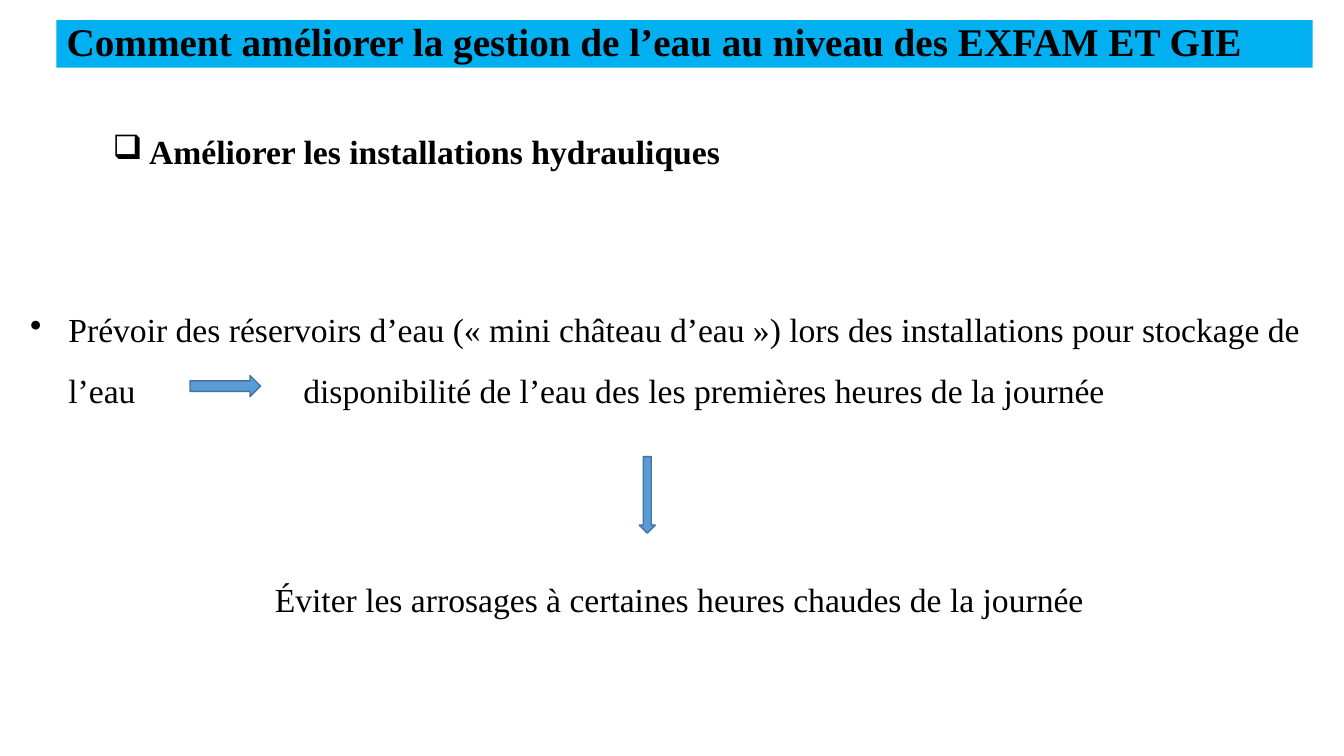
from lxml import etree
from pptx import Presentation
from pptx.dml.color import RGBColor
from pptx.enum import shapes, text
from pptx.oxml.ns import qn
from pptx.util import Inches, Pt

BLACK = RGBColor(0x00, 0x00, 0x00)
CYAN = RGBColor(0x00, 0xB0, 0xF0)
BLUE = RGBColor(0x5B, 0x9B, 0xD5)
NAVY = RGBColor(0x43, 0x73, 0x9E)
FONT = "Times New Roman"


class Deck:
    def __init__(self):
        self.prs = Presentation()
        self.prs.slide_width = Inches(13.33)
        self.prs.slide_height = Inches(7.5)
        self.slide = self.prs.slides.add_slide(self.prs.slide_layouts[5])

    def label(self, shape, words, size=24, bold=False, align=text.PP_ALIGN.LEFT,
              space=1.0):
        frame = shape.text_frame
        frame.word_wrap = True
        para = frame.paragraphs[0]
        para.alignment = align
        para.line_spacing = space
        run = para.add_run()
        run.text = words
        font = run.font
        font.name, font.size, font.bold = FONT, Pt(size), bold
        font.color.rgb = BLACK
        return para

    def title(self, box, words):
        shape = self.slide.shapes.title
        shape.left, shape.top, shape.width, shape.height = map(Inches, box)
        shape.fill.solid()
        shape.fill.fore_color.rgb = CYAN
        frame = shape.text_frame
        frame.auto_size = text.MSO_AUTO_SIZE.NONE
        frame.vertical_anchor = text.MSO_ANCHOR.MIDDLE
        self.label(shape, words, size=28, bold=True, space=0.9)

    def text(self, box, words, **style):
        shape = self.slide.shapes.add_textbox(*map(Inches, box))
        para = self.label(shape, words, **style)
        shape.text_frame.auto_size = text.MSO_AUTO_SIZE.SHAPE_TO_FIT_TEXT
        return para

    def bullet(self, para, mark, indent=0, tab=None):
        """Give a paragraph a bullet, a hanging indent and maybe a tab stop."""
        props = para._p.get_or_add_pPr()
        props.set("marL", str(Inches(indent)))
        props.set("indent", str(-Inches(indent)))
        etree.SubElement(props, qn("a:buChar")).set("char", mark)
        if tab:
            stops = etree.SubElement(props, qn("a:tabLst"))
            stop = etree.SubElement(stops, qn("a:tab"))
            stop.set("pos", str(Inches(tab)))
            stop.set("algn", "l")

    def arrow(self, box, turn=0):
        shape = self.slide.shapes.add_shape(
            shapes.MSO_SHAPE.DOWN_ARROW, *map(Inches, box))
        shape.rotation = turn
        shape.shadow.inherit = False
        shape.fill.solid()
        shape.fill.fore_color.rgb = BLUE
        shape.line.color.rgb = NAVY
        shape.line.width = Pt(1)


def main():
    deck = Deck()
    deck.title((0.56, 0.2, 12.46, 0.47),
               "Comment améliorer la gestion de l’eau au niveau des EXFAM ET GIE")
    head = deck.text((1.02, 1.25, 12.33, 0.5),
                     " Améliorer les installations hydrauliques", bold=True)
    deck.bullet(head, "❑")
    tank = deck.text((0.2, 2.82, 12.81, 1.31),
                     "Prévoir des réservoirs d’eau (« mini château d’eau ») lors des "
                     "installations pour stockage de l’eau\tdisponibilité de l’eau des "
                     "les premières heures de la journée", space=1.5)
    deck.bullet(tank, "•", indent=0.38, tab=2.71)
    deck.arrow((6.34, 4.53, 0.16, 0.76))
    deck.text((2.23, 5.29, 9.1, 0.91),
              "Éviter les arrosages à certaines heures chaudes de la journée ",
              align=text.PP_ALIGN.CENTER, space=2.0)
    deck.arrow((2.13, 3.48, 0.21, 0.7), turn=270)
    deck.prs.save("out.pptx")


if __name__ == "__main__":
    main()
